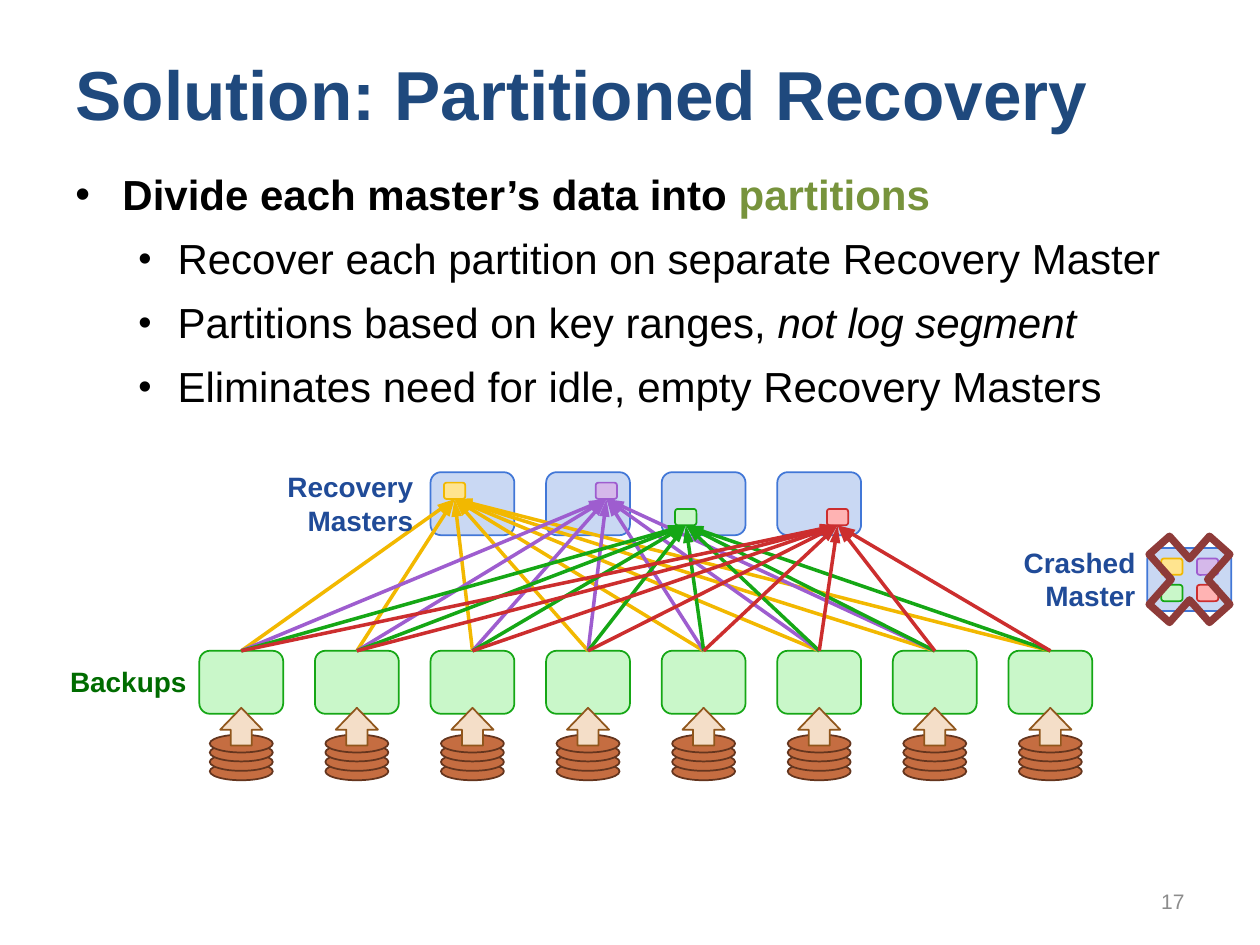
from typing import NamedTuple

from lxml.etree import SubElement
from pptx import Presentation
from pptx.dml.color import RGBColor
from pptx.enum.shapes import MSO_CONNECTOR, MSO_SHAPE as Preset
from pptx.enum.text import MSO_ANCHOR, MSO_AUTO_SIZE, PP_ALIGN
from pptx.oxml.ns import qn
from pptx.util import Cm, Pt

FONT = "Arial"
BLACK = RGBColor(0x00, 0x00, 0x00)
NAVY = RGBColor(0x1F, 0x49, 0x7D)
OLIVE = RGBColor(0x77, 0x93, 0x3C)
GRAY = RGBColor(0x8C, 0x8C, 0x8C)
LABEL_BLUE = RGBColor(0x20, 0x4B, 0x98)
LABEL_GREEN = RGBColor(0x00, 0x6C, 0x00)
CROSS_RED = RGBColor(0x8E, 0x3B, 0x39)


class Paint(NamedTuple):
    fill: RGBColor
    line: RGBColor


BLUE = Paint(RGBColor(0xC9, 0xD8, 0xF3), RGBColor(0x41, 0x77, 0xD7))
YELLOW = Paint(RGBColor(0xFF, 0xE4, 0x8F), RGBColor(0xF2, 0xB8, 0x00))
PURPLE = Paint(RGBColor(0xD5, 0xB8, 0xEA), RGBColor(0x9E, 0x5D, 0xCF))
GREEN = Paint(RGBColor(0xC9, 0xF7, 0xC9), RGBColor(0x15, 0xA7, 0x15))
RED = Paint(RGBColor(0xFF, 0xB3, 0xB3), RGBColor(0xCC, 0x2E, 0x2E))
COPPER = Paint(RGBColor(0xC5, 0x6D, 0x41), RGBColor(0x64, 0x35, 0x1E))
SAND = Paint(RGBColor(0xF4, 0xDE, 0xC8), RGBColor(0x90, 0x56, 0x1C))


class Box(NamedTuple):
    """Left, top, width and height in centimetres."""
    left: float
    top: float
    width: float
    height: float

    def lengths(self):
        return [Cm(value) for value in self]


class Partition(NamedTuple):
    paint: Paint
    left: float  # in its recovery master
    top: float
    crashed_left: float  # in the crashed master
    crashed_top: float
    sources: int  # backups that feed it


class Label(NamedTuple):
    text: str
    box: Box
    color: RGBColor
    size: float = 16
    bold: bool = True
    anchor: MSO_ANCHOR = MSO_ANCHOR.TOP
    wrap: bool = False


class Bullet(NamedTuple):
    text: str
    ending: str = ""
    level: int = 1


BACKUP_COUNT = 8
FIRST_LEFT, PITCH = 4.02, 2.33
FIRST_MASTER_COLUMN = 2
SERVER_WIDTH, SERVER_HEIGHT = 1.69, 1.27
MASTER_TOP, BACKUP_TOP = 9.52, 13.12
PARTITION_WIDTH, PARTITION_HEIGHT = 0.43, 0.33
DISK_TOPS = (15.37, 15.18, 14.99, 14.81)
CRASHED_LEFT, CRASHED_TOP = 23.13, 11.05

PARTITIONS = [
    Partition(YELLOW, 0.27, 0.21, 0.28, 0.21, 8),
    Partition(PURPLE, 1.0, 0.21, 1.0, 0.21, 7),
    Partition(GREEN, 0.27, 0.74, 0.28, 0.74, 8),
    Partition(RED, 1.0, 0.74, 1.0, 0.74, 8),
]
LABELS = [
    Label("Recovery\vMasters", Box(5.51, 9.35, 3.07, 1.63), LABEL_BLUE),
    Label("Backups", Box(1.14, 13.28, 2.87, 0.94), LABEL_GREEN),
    Label("Crashed\vMaster", Box(20.35, 10.87, 2.79, 1.63), LABEL_BLUE),
    Label("17", Box(18.21, 17.65, 5.92, 1.02), GRAY, 12, False, MSO_ANCHOR.MIDDLE, True),
]
BULLETS = [
    Bullet("Divide each master’s data into ", "partitions", 0),
    Bullet("Recover each partition on separate Recovery Master"),
    Bullet("Partitions based on key ranges, ", "not log segment"),
    Bullet("Eliminates need for idle, empty Recovery Masters"),
]


def column_left(column: int) -> float:
    return FIRST_LEFT + column * PITCH


def add_preset(shapes, preset: Preset, box: Box, paint: Paint):
    shape = shapes.add_shape(preset, *box.lengths())
    shape.shadow.inherit = False
    shape.fill.solid()
    shape.fill.fore_color.rgb = paint.fill
    shape.line.color.rgb = paint.line
    shape.line.width = Pt(1)
    return shape


def add_server(shapes, left: float, top: float, paint: Paint) -> None:
    add_preset(shapes, Preset.ROUNDED_RECTANGLE,
               Box(left, top, SERVER_WIDTH, SERVER_HEIGHT), paint)


def add_partition(shapes, left: float, top: float, paint: Paint) -> None:
    add_preset(shapes, Preset.ROUNDED_RECTANGLE,
               Box(left, top, PARTITION_WIDTH, PARTITION_HEIGHT), paint)


def add_backup(slide, left: float) -> None:
    """Draw a backup server with its stack of disks and the read arrow."""
    shapes = slide.shapes.add_group_shape().shapes
    for top in DISK_TOPS:
        add_preset(shapes, Preset.OVAL, Box(left + 0.21, top, 1.27, 0.36), COPPER)
    add_server(shapes, left, BACKUP_TOP, GREEN)
    arrow = add_preset(shapes, Preset.UP_ARROW, Box(left + 0.42, 14.27, 0.85, 0.76), SAND)
    arrow.adjustments[1] = 0.58


def add_flows(shapes, column: int, partition: Partition) -> None:
    """Draw the arrows from the backups to one partition."""
    end_x = column_left(column) + partition.left + PARTITION_WIDTH / 2
    end_y = MASTER_TOP + partition.top + PARTITION_HEIGHT
    for source in range(partition.sources):
        start_x = column_left(source) + SERVER_WIDTH / 2
        connector = shapes.add_connector(
            MSO_CONNECTOR.STRAIGHT, Cm(start_x), Cm(BACKUP_TOP), Cm(end_x), Cm(end_y))
        connector.line.color.rgb = partition.paint.line
        connector.line.width = Pt(2)
        SubElement(connector.line._get_or_add_ln(), qn("a:tailEnd"),
                   type="triangle", w="med", len="lg")
        SubElement(connector._element.spPr, qn("a:effectLst"))


def add_crashed_master(slide) -> None:
    shapes = slide.shapes.add_group_shape().shapes
    add_server(shapes, CRASHED_LEFT, CRASHED_TOP, BLUE)
    for partition in PARTITIONS:
        add_partition(shapes, CRASHED_LEFT + partition.crashed_left,
                      CRASHED_TOP + partition.crashed_top, partition.paint)
    cross = add_preset(slide.shapes, Preset.MATH_MULTIPLY, Box(22.81, 10.36, 2.34, 2.64),
                       Paint(CROSS_RED, CROSS_RED))
    cross.fill.background()
    cross.line.width = Pt(4.25)
    SubElement(cross.line._get_or_add_ln(), qn("a:round"))


def set_font(font, size: float, color: RGBColor, bold: bool) -> None:
    font.name, font.size, font.bold = FONT, Pt(size), bold
    font.color.rgb = color


def add_label(slide, label: Label) -> None:
    frame = slide.shapes.add_textbox(*label.box.lengths()).text_frame
    frame.word_wrap = label.wrap
    frame.vertical_anchor = label.anchor
    paragraph = frame.paragraphs[0]
    paragraph.text = label.text
    paragraph.alignment = PP_ALIGN.RIGHT
    set_font(paragraph.font, label.size, label.color, label.bold)


def add_bullets(slide, box: Box) -> None:
    frame = slide.shapes.add_textbox(*box.lengths()).text_frame
    frame.word_wrap = True
    for index, bullet in enumerate(BULLETS):
        paragraph = frame.add_paragraph() if index else frame.paragraphs[0]
        top_level = bullet.level == 0
        paragraph.level = bullet.level
        paragraph.line_spacing = 0.9
        paragraph.space_before, paragraph.space_after = Pt(4.8), Pt(6)
        set_font(paragraph.font, 24, BLACK, top_level)
        paragraph.add_run().text = bullet.text
        if bullet.ending:
            ending = paragraph.add_run()
            ending.text = bullet.ending
            if top_level:
                ending.font.color.rgb = OLIVE
            else:
                ending.font.italic = True
        properties = paragraph._p.get_or_add_pPr()
        margin, indent = (0.95, -0.95) if top_level else (2.06, -0.79)
        properties.set("marL", str(Cm(margin)))
        properties.set("indent", str(Cm(indent)))
        marks = [("a:buSzPct", {"val": "100000" if top_level else "90000"}),
                 ("a:buFont", {"typeface": FONT}), ("a:buChar", {"char": "•"})]
        defaults = properties.find(qn("a:defRPr"))
        for tag, attributes in marks:
            mark = SubElement(properties, qn(tag), attributes)
            if defaults is not None:
                defaults.addprevious(mark)


def add_title(slide, text: str, box: Box) -> None:
    title = slide.shapes.title
    title.left, title.top, title.width, title.height = box.lengths()
    frame = title.text_frame
    frame.auto_size = MSO_AUTO_SIZE.NONE
    frame.vertical_anchor = MSO_ANCHOR.MIDDLE
    paragraph = frame.paragraphs[0]
    paragraph.text = text
    paragraph.alignment = PP_ALIGN.LEFT
    set_font(paragraph.font, 39.6, NAVY, True)


def main() -> None:
    presentation = Presentation()
    presentation.slide_width, presentation.slide_height = Cm(25.4), Cm(19.05)
    slide = presentation.slides.add_slide(presentation.slide_layouts[5])
    add_title(slide, "Solution: Partitioned Recovery", Box(1.27, 0.76, 22.86, 2.21))
    add_bullets(slide, Box(1.27, 3.38, 22.86, 5.28))
    for column in range(BACKUP_COUNT):
        add_backup(slide, column_left(column))
    for column, partition in enumerate(PARTITIONS, FIRST_MASTER_COLUMN):
        left = column_left(column)
        add_server(slide.shapes, left, MASTER_TOP, BLUE)
        add_partition(slide.shapes, left + partition.left, MASTER_TOP + partition.top,
                      partition.paint)
    flows = slide.shapes.add_group_shape().shapes
    for column, partition in enumerate(PARTITIONS, FIRST_MASTER_COLUMN):
        add_flows(flows, column, partition)
    add_crashed_master(slide)
    for label in LABELS:
        add_label(slide, label)
    presentation.save("out.pptx")


if __name__ == "__main__":
    main()
